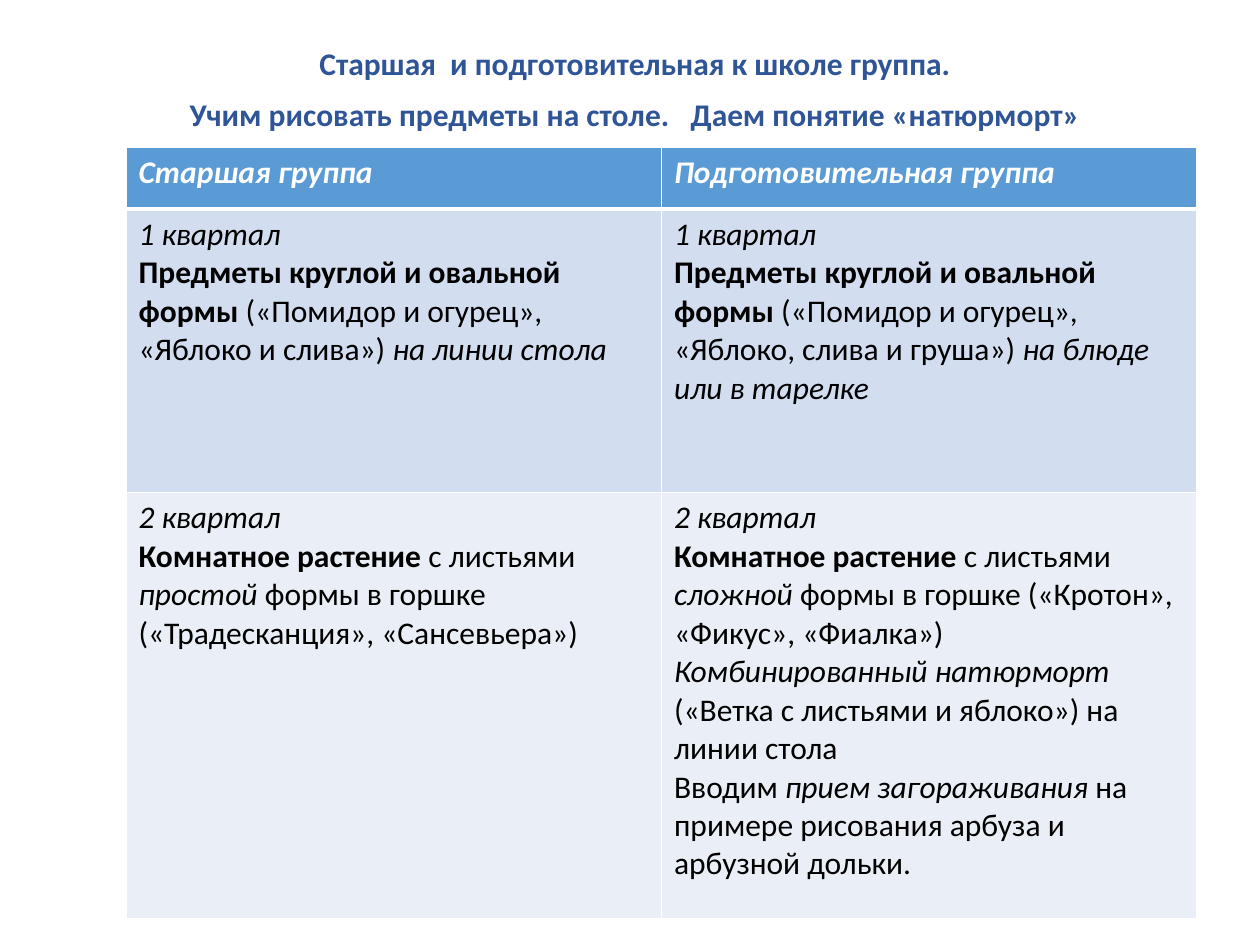
"""Build a slide comparing drawing topics for the senior and preparatory groups."""
from dataclasses import dataclass
from typing import NamedTuple

import lxml.etree
import pptx
import pptx.dml.color
import pptx.enum.text
import pptx.oxml.ns
import pptx.util

Inches = pptx.util.Inches
RGB = pptx.dml.color.RGBColor.from_string


@dataclass(frozen=True)
class Theme:
    font: str = "Calibri"
    size: int = 18
    title: str = "2F5597"
    text: str = "000000"
    white: str = "FFFFFF"
    header: str = "5B9BD5"
    bands: tuple[str, str] = ("D2DEEF", "EAEFF7")
    rule: float = 1
    header_rule: float = 3


class Span(NamedTuple):
    text: str
    bold: bool = False
    italic: bool = False


Paragraphs = list[list[Span]]
THEME = Theme()

HEADING: Paragraphs = [
    [Span("Старшая  и подготовительная к школе группа.", bold=True)],
    [Span("Учим рисовать предметы на столе.   Даем понятие «натюрморт»", bold=True)],
]
GROUPS = ("Старшая группа", "Подготовительная группа")
ROW_HEIGHTS = (0.49, 2.25, 3.38)


def quarter(number: int, topic: str, *details: Span) -> Paragraphs:
    """Return a quarter label followed by its bold topic and details."""
    return [[Span(f"{number} квартал", italic=True)], [Span(topic, bold=True), *details]]


def round_objects(examples: str, place: str) -> Paragraphs:
    """Return the first-quarter plan."""
    return quarter(1, "Предметы круглой и овальной формы",
                   Span(f" ({examples}) "), Span(place, italic=True))


def house_plant(leaf_form: str, examples: str) -> Paragraphs:
    """Return the second-quarter plan."""
    return quarter(2, "Комнатное растение", Span(" с листьями "),
                   Span(f"{leaf_form} ", italic=True), Span(f"формы в горшке ({examples})"))


STILL_LIFE: Paragraphs = [
    [Span("Комбинированный натюрморт", italic=True),
     Span(" («Ветка с листьями и яблоко») на линии стола")],
    [Span("Вводим "), Span("прием загораживания ", italic=True),
     Span("на примере рисования арбуза и арбузной дольки.")],
]
QUARTERS: list[list[Paragraphs]] = [
    [round_objects("«Помидор и огурец», «Яблоко и слива»", "на линии стола"),
     round_objects("«Помидор и огурец», «Яблоко, слива и груша»", "на блюде или в тарелке")],
    [house_plant("простой", "«Традесканция», «Сансевьера»"),
     house_plant("сложной", "«Кротон», «Фикус», «Фиалка»") + STILL_LIFE],
]


def write(frame, paragraphs: Paragraphs, color: str) -> None:
    """Fill a text frame run by run."""
    for index, spans in enumerate(paragraphs):
        paragraph = frame.add_paragraph() if index else frame.paragraphs[0]
        for span in spans:
            run = paragraph.add_run()
            run.text = span.text
            run.font.name = THEME.font
            run.font.size = pptx.util.Pt(THEME.size)
            run.font.bold = span.bold
            run.font.italic = span.italic
            run.font.color.rgb = RGB(color)


def draw_heading(slide) -> None:
    """Place and format the two-line title."""
    heading = slide.shapes.title
    heading.left, heading.top = Inches(0.75), Inches(0.33)
    heading.width, heading.height = Inches(8.58), Inches(6.33)
    frame = heading.text_frame
    frame.word_wrap = True
    frame.auto_size = pptx.enum.text.MSO_AUTO_SIZE.NONE
    frame.vertical_anchor = pptx.enum.text.MSO_ANCHOR.TOP
    write(frame, HEADING, THEME.title)
    for index, line in enumerate(frame.paragraphs):
        line.alignment = pptx.enum.text.PP_ALIGN.CENTER
        line.line_spacing = 0.9
        line.space_before = pptx.util.Pt(10 if index else 0)


def draw_borders(cell, top: float, bottom: float) -> None:
    """Give a cell white borders of the stated weights."""
    properties = cell._tc.get_or_add_tcPr()
    qn = pptx.oxml.ns.qn
    weights = {"lnL": THEME.rule, "lnR": THEME.rule, "lnT": top, "lnB": bottom}
    for side, weight in weights.items():
        line = lxml.etree.SubElement(properties, qn(f"a:{side}"), w=str(pptx.util.Pt(weight)))
        fill = lxml.etree.SubElement(line, qn("a:solidFill"))
        lxml.etree.SubElement(fill, qn("a:srgbClr"), val=THEME.white)


def draw_plan(slide) -> None:
    """Draw the table of groups and quarters."""
    header = [[[Span(group, bold=True, italic=True)]] for group in GROUPS]
    rows = [header, *QUARTERS]
    fills = (THEME.header, *THEME.bands)
    plan = slide.shapes.add_table(len(rows), len(GROUPS), Inches(1), Inches(1.17),
                                  Inches(8.5), Inches(sum(ROW_HEIGHTS))).table
    for r, (contents, fill, height) in enumerate(zip(rows, fills, ROW_HEIGHTS)):
        plan.rows[r].height = Inches(height)
        for c, paragraphs in enumerate(contents):
            cell = plan.cell(r, c)
            draw_borders(cell, THEME.header_rule if r == 1 else THEME.rule,
                         THEME.header_rule if r == 0 else THEME.rule)
            cell.fill.solid()
            cell.fill.fore_color.rgb = RGB(fill)
            write(cell.text_frame, paragraphs, THEME.text if r else THEME.white)


def main() -> None:
    """Build and save the slide."""
    deck = pptx.Presentation()
    deck.slide_width, deck.slide_height = Inches(10), Inches(7.5)
    slide = deck.slides.add_slide(deck.slide_layouts[5])
    draw_heading(slide)
    draw_plan(slide)
    deck.save("out.pptx")


if __name__ == "__main__":
    main()
